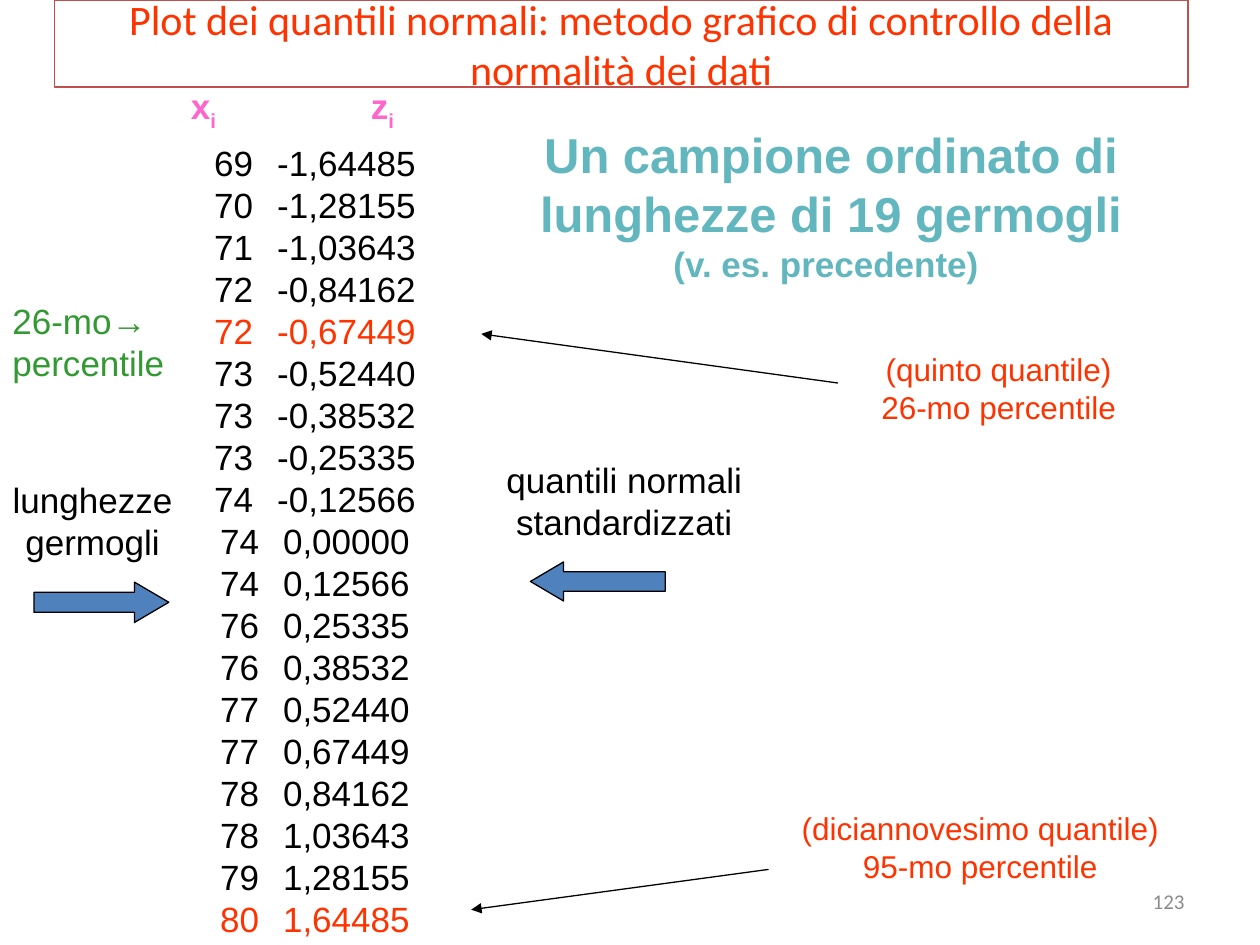
from lxml import etree
from pptx import Presentation
from pptx.dml.color import RGBColor
from pptx.enum.shapes import MSO_CONNECTOR, MSO_SHAPE
from pptx.enum.text import MSO_ANCHOR, MSO_AUTO_SIZE, PP_ALIGN
from pptx.oxml.ns import qn
from pptx.util import Inches, Pt

LEFT, CENTER, RIGHT = PP_ALIGN.LEFT, PP_ALIGN.CENTER, PP_ALIGN.RIGHT
TOP, MIDDLE = MSO_ANCHOR.TOP, MSO_ANCHOR.MIDDLE
TO_RIGHT, TO_LEFT = MSO_SHAPE.RIGHT_ARROW, MSO_SHAPE.LEFT_ARROW
STRAIGHT = MSO_CONNECTOR.STRAIGHT

BLACK = RGBColor(0x00, 0x00, 0x00)
RED = RGBColor(0xFF, 0x33, 0x00)
BRICK = RGBColor(0xC0, 0x50, 0x4D)
TEAL = RGBColor(0x62, 0xB7, 0xBE)
PINK = RGBColor(0xFF, 0x66, 0xCC)
GREEN = RGBColor(0x33, 0x99, 0x33)
BLUE = RGBColor(0x4F, 0x81, 0xBD)
GRAY = RGBColor(0x8C, 0x8C, 0x8C)

LENGTHS = [69, 70, 71, 72, 72, 73, 73, 73, 74, 74,
           74, 76, 76, 77, 77, 78, 78, 79, 80]
UPPER = ["0,12566", "0,25335", "0,38532", "0,52440", "0,67449",
         "0,84162", "1,03643", "1,28155", "1,64485"]
SCORES = ["-" + z for z in reversed(UPPER)] + ["0,00000"] + UPPER
MARKED = (4, 18)  # rows of the fifth and the nineteenth quantile


def write(para, text, size=20, color=BLACK, font="Arial", bold=False,
          align=CENTER, sub=False):
    para.alignment = align
    run = para.add_run()
    run.text = text
    run.font.name = font
    run.font.size = Pt(size)
    run.font.bold = bold
    run.font.color.rgb = color
    if sub:
        run.font._element.set("baseline", "-25000")


class Board:
    def __init__(self, slide, font="Arial", ink=BLACK, width=0.75):
        self.slide = slide
        self.font = font
        self.ink = ink
        self.width = Pt(width)

    def title(self, text, x, y, w, h):
        shape = self.slide.shapes.title
        shape.left, shape.top = Inches(x), Inches(y)
        shape.width, shape.height = Inches(w), Inches(h)
        shape.line.color.rgb = BRICK
        shape.line.width = self.width
        frame = shape.text_frame
        frame.auto_size = MSO_AUTO_SIZE.NONE
        frame.vertical_anchor = MIDDLE
        write(frame.paragraphs[0], text, size=24, color=RED, font="Calibri")

    def text(self, lines, x, y, w, h, wrap=True, anchor=TOP, **style):
        """Each line is a text or a pair of a text and its own format."""
        box = self.slide.shapes.add_textbox(
            Inches(x), Inches(y), Inches(w), Inches(h))
        frame = box.text_frame
        frame.word_wrap = wrap
        frame.vertical_anchor = anchor
        for i, line in enumerate(lines):
            para = frame.add_paragraph() if i else frame.paragraphs[0]
            words, own = (line, {}) if isinstance(line, str) else line
            write(para, words, **{"font": self.font, **style, **own})
        return frame

    def symbol(self, name, x, y, w, h):
        """Column head with a subscript i."""
        look = {"color": PINK, "bold": True}
        frame = self.text([name], x, y, w, h, wrap=False, **look)
        write(frame.paragraphs[0], "i", sub=True, **look)

    def block(self, kind, x, y, w, h):
        shape = self.slide.shapes.add_shape(
            kind, Inches(x), Inches(y), Inches(w), Inches(h))
        shape.shadow.inherit = False
        shape.adjustments[1] = 0.85
        shape.fill.solid()
        shape.fill.fore_color.rgb = BLUE
        shape.line.color.rgb = self.ink
        shape.line.width = self.width

    def pointer(self, x1, y1, x2, y2):
        line = self.slide.shapes.add_connector(
            STRAIGHT, Inches(x1), Inches(y1), Inches(x2), Inches(y2))
        line.line.color.rgb = self.ink
        line.line.width = self.width
        etree.SubElement(line.line._get_or_add_ln(), qn("a:tailEnd"),
                         type="triangle")
        etree.SubElement(line._element.spPr, qn("a:effectLst"))


def main():
    deck = Presentation()
    deck.slide_width, deck.slide_height = Inches(10), Inches(7.5)
    board = Board(deck.slides.add_slide(deck.slide_layouts[5]))

    board.text(["123"], 7.17, 6.95, 2.33, 0.4, anchor=MIDDLE, size=12,
               color=GRAY, font="Calibri", align=RIGHT)
    board.title("Plot dei quantili normali: metodo grafico di controllo "
                "della normalità dei dati", 0.43, 0, 9, 0.69)

    rows = [(f"{x}\t{z}", {"color": RED if i in MARKED else BLACK})
            for i, (x, z) in enumerate(zip(LENGTHS, SCORES))]
    board.text(rows, 0, 1.07, 5, 6.43)
    board.symbol("x", 1.41, 0.62, 0.41, 0.44)
    board.symbol("z", 2.84, 0.62, 0.39, 0.44)

    board.text(["Un campione ordinato di", "lunghezze di 19 germogli",
                ("(v. es. precedente) ", {"size": 20})],
               3.19, 0.94, 6.81, 1.85, size=28, color=TEAL, bold=True)

    board.text(["lunghezze", "germogli"], 0, 3.75, 1.47, 0.77)
    board.block(TO_RIGHT, 0.27, 4.62, 1.07, 0.32)
    board.text(["quantili normali", "standardizzati"], 3.5, 3.59, 2.91, 0.77)
    board.block(TO_LEFT, 4.21, 4.46, 1.07, 0.31)

    note = {"size": 18, "color": RED}
    board.pointer(6.65, 3.04, 3.82, 2.65)
    board.text(["(quinto quantile)", "26-mo percentile"],
               6.58, 2.73, 2.69, 0.9, wrap=False, **note)
    board.pointer(6.1, 6.9, 3.74, 7.22)
    board.text(["(diciannovesimo quantile)", "95-mo percentile"],
               5.56, 6.37, 4.44, 0.9, **note)
    board.text(["26-mo→", "percentile"], 0, 2.33, 1.46, 0.77,
               color=GREEN, align=LEFT)

    deck.save("out.pptx")


if __name__ == "__main__":
    main()
